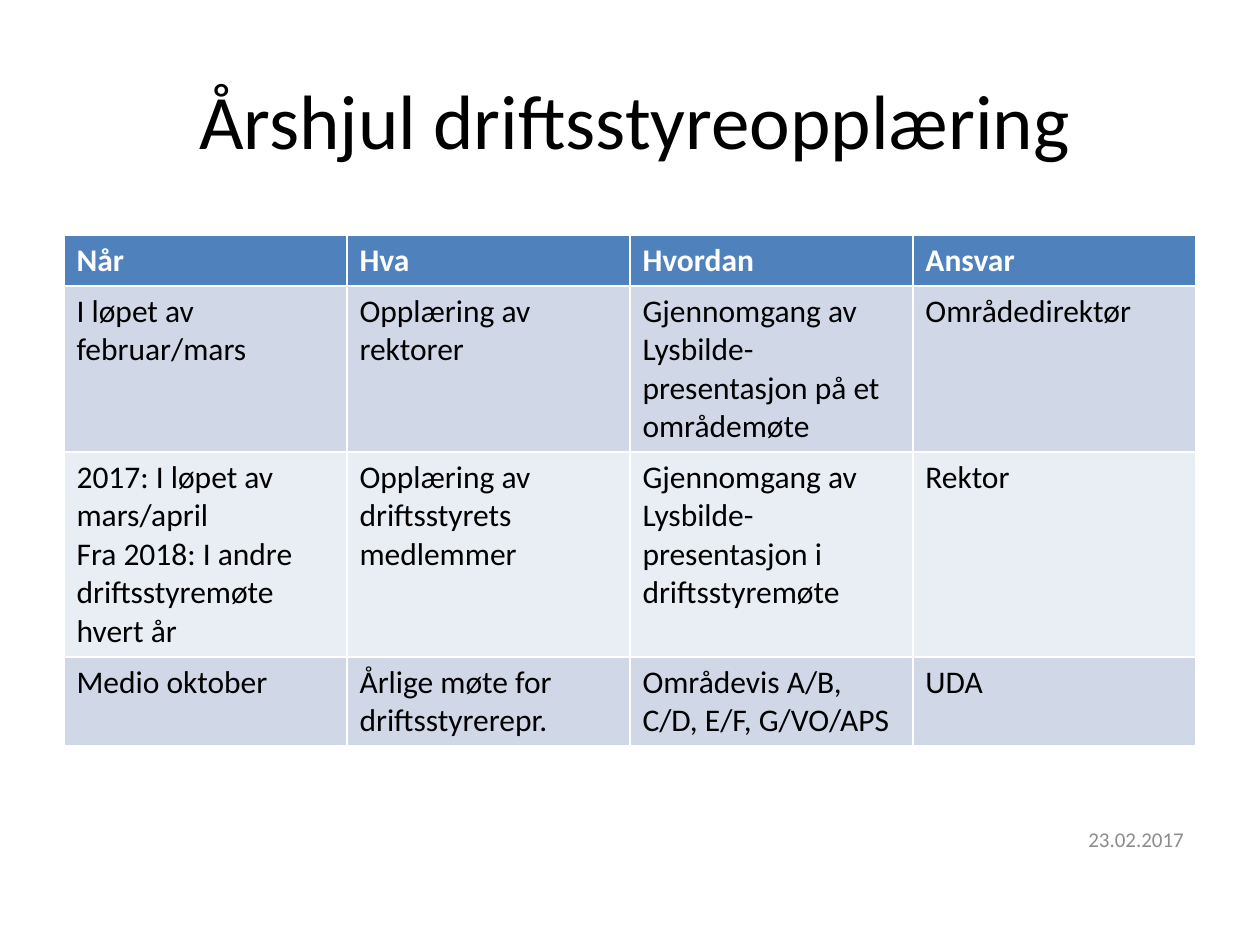
from pptx import Presentation
from pptx.dml.color import RGBColor
from pptx.enum.text import MSO_ANCHOR, PP_ALIGN
from pptx.util import Pt

PX = 914400 // 126
TOP, MIDDLE = MSO_ANCHOR.TOP, MSO_ANCHOR.MIDDLE
LEFT, CENTER = PP_ALIGN.LEFT, PP_ALIGN.CENTER
FONT = "Calibri"
COLORS = {
    "text": "000000",
    "date": "8C8C8C",
    "header": "4F81BD",
    "header_text": "FFFFFF",
    "odd_row": "D0D8E8",
    "even_row": "E9EDF4",
}


def write_run(paragraph, text, size, color, bold=False):
    run = paragraph.add_run()
    run.text = text
    run.font.name = FONT
    run.font.size = Pt(size)
    run.font.bold = bold
    run.font.color.rgb = RGBColor.from_string(COLORS[color])


prs = Presentation()
prs.slide_width = 1260 * PX
prs.slide_height = 945 * PX
slide = prs.slides.add_slide(prs.slide_layouts[6])

# Date and title
for text, box, size, color, align, anchor in [
    ("23.02.2017", (1076, 814, 152, 50), 12, "date", LEFT, MIDDLE),
    ("Årshjul driftsstyreopplæring", (64, 66, 1142, 149), 44, "text", CENTER, TOP),
]:
    frame = slide.shapes.add_textbox(*(length * PX for length in box)).text_frame
    frame.word_wrap = True
    frame.vertical_anchor = anchor
    frame.paragraphs[0].alignment = align
    write_run(frame.paragraphs[0], text, size, color)

# Yearly plan: a line break in a cell starts a new paragraph
plan_rows = [
    ["Når", "Hva", "Hvordan", "Ansvar"],
    ["I løpet av februar/mars", "Opplæring av rektorer",
     "Gjennomgang av Lysbilde-presentasjon på et områdemøte", "Områdedirektør"],
    ["2017: I løpet av mars/april\nFra 2018: I andre driftsstyremøte hvert år",
     "Opplæring av driftsstyrets medlemmer",
     "Gjennomgang av Lysbilde-presentasjon i driftsstyremøte", "Rektor"],
    ["Medio oktober", "Årlige møte for driftsstyrerepr.",
     "Områdevis A/B, C/D, E/F, G/VO/APS", "UDA"],
]
row_heights = [51, 166, 205, 89]
column_width = 283

plan = slide.shapes.add_table(
    len(plan_rows), len(plan_rows[0]), 64 * PX, 235 * PX,
    column_width * len(plan_rows[0]) * PX, sum(row_heights) * PX).table
for column in plan.columns:
    column.width = column_width * PX

for row_index, (entries, height) in enumerate(zip(plan_rows, row_heights)):
    plan.rows[row_index].height = height * PX
    is_header = row_index == 0
    if is_header:
        fill = "header"
    else:
        fill = "odd_row" if row_index % 2 else "even_row"
    for column_index, entry in enumerate(entries):
        cell = plan.cell(row_index, column_index)
        cell.fill.solid()
        cell.fill.fore_color.rgb = RGBColor.from_string(COLORS[fill])
        for line_index, line in enumerate(entry.split("\n")):
            frame = cell.text_frame
            paragraph = frame.add_paragraph() if line_index else frame.paragraphs[0]
            write_run(paragraph, line, 18, "header_text" if is_header else "text", is_header)

prs.save("out.pptx")
